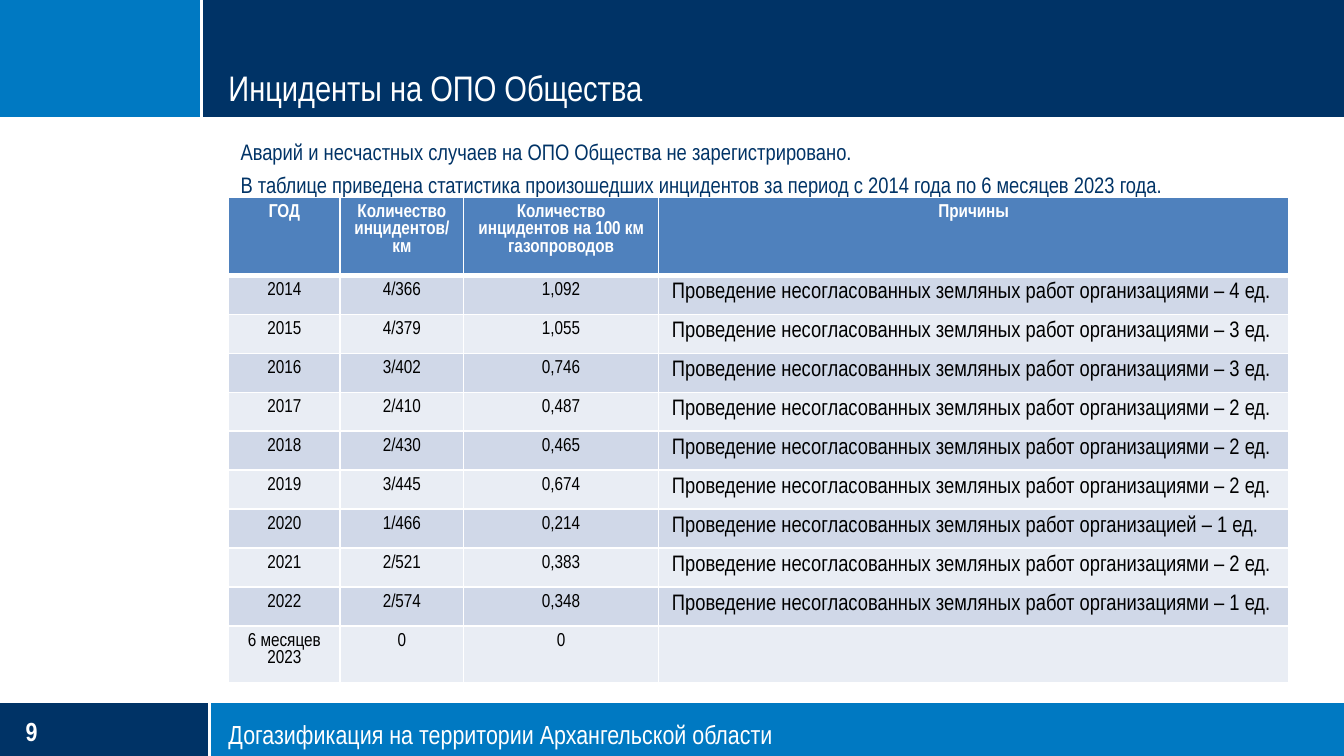
"""Build the slide on incidents at hazardous production facilities."""
from dataclasses import dataclass

from lxml.etree import SubElement
from pptx import Presentation
from pptx.dml.color import RGBColor
from pptx.enum.shapes import MSO_CONNECTOR, MSO_SHAPE
from pptx.enum.text import MSO_ANCHOR as Anchor, MSO_AUTO_SIZE, PP_ALIGN as Align
from pptx.oxml.ns import qn
from pptx.util import Inches, Pt

NAVY = RGBColor(0x00, 0x33, 0x66)
BLUE = RGBColor(0x00, 0x79, 0xC2)
WHITE = RGBColor(0xFF, 0xFF, 0xFF)
BLACK = RGBColor(0x00, 0x00, 0x00)
HEADER_FILL = RGBColor(0x4F, 0x81, 0xBD)
ROW_FILLS = (RGBColor(0xE9, 0xED, 0xF4), RGBColor(0xD0, 0xD8, 0xE8))
FONT = "Arial Narrow"
WIDTH = 10
HEIGHT = WIDTH * 9 / 16
FOOTER_TOP = 5.23


@dataclass(frozen=True)
class Band:
    left: float
    top: float
    width: float
    height: float
    color: RGBColor


@dataclass(frozen=True)
class Rule:
    start: tuple[float, float]
    end: tuple[float, float]


@dataclass(frozen=True)
class TextStyle:
    size: float
    color: RGBColor
    bold: bool = False
    align: Align = Align.LEFT


BANDS = (
    Band(0, 0, WIDTH, 0.87, NAVY),
    Band(0, 0, 1.5, 0.87, BLUE),
    Band(0, FOOTER_TOP, 1.62, HEIGHT - FOOTER_TOP, NAVY),
    Band(1.55, FOOTER_TOP, 8.45, HEIGHT - FOOTER_TOP, BLUE),
)
RULES = (
    Rule((0, 5.22), (WIDTH, 5.22)),
    Rule((1.56, 5.22), (1.56, HEIGHT)),
    Rule((0, 0.88), (WIDTH, 0.88)),
    Rule((1.5, 0), (1.5, 0.88)),
)
INTRO = (
    "Аварий и несчастных случаев на ОПО Общества не зарегистрировано.",
    "В таблице приведена статистика произошедших инцидентов за период с 2014 года по 6 месяцев 2023 года.",
)
HEADERS = ("ГОД", "Количество инцидентов/км", "Количество инцидентов на 100 км газопроводов", "Причины")
WORKS = "Проведение несогласованных земляных работ"
MANY, ONE = f"{WORKS} организациями", f"{WORKS} организацией"
INCIDENTS = (
    ("2014", "4/366", "1,092", f"{MANY} – 4 ед."),
    ("2015", "4/379", "1,055", f"{MANY} – 3 ед."),
    ("2016", "3/402", "0,746", f"{MANY} – 3 ед."),
    ("2017", "2/410", "0,487", f"{MANY} – 2 ед."),
    ("2018", "2/430", "0,465", f"{MANY} – 2 ед."),
    ("2019", "3/445", "0,674", f"{MANY} – 2 ед."),
    ("2020", "1/466", "0,214", f"{ONE} – 1 ед."),
    ("2021", "2/521", "0,383", f"{MANY} – 2 ед."),
    ("2022", "2/574", "0,348", f"{MANY} – 1 ед."),
    ("6 месяцев 2023", "0", "0", ""),
)
COLUMN_WIDTHS = (0.83, 0.92, 1.45, 4.69)
ROW_HEIGHTS = (0.58, *[0.29] * 9, 0.42)
HEADER_BORDERS = {"a:lnL": 1, "a:lnR": 1, "a:lnT": 1, "a:lnB": 3}
HEADER_STYLE = TextStyle(10, WHITE, True, Align.CENTER)
FIGURE_STYLE = TextStyle(10, BLACK, False, Align.CENTER)
REASON_STYLE = TextStyle(12, BLACK)


def set_values(target, values: dict) -> None:
    for name, value in values.items():
        setattr(target, name, value)


def write(paragraph, text: str, style: TextStyle) -> None:
    paragraph.alignment = style.align
    run = paragraph.add_run()
    run.text = text
    set_values(run.font, {"name": FONT, "size": Pt(style.size), "bold": style.bold})
    run.font.color.rgb = style.color


def draw_band(slide, band: Band) -> None:
    shape = slide.shapes.add_shape(
        MSO_SHAPE.RECTANGLE, Inches(band.left), Inches(band.top), Inches(band.width), Inches(band.height))
    shape.shadow.inherit = False
    shape.fill.solid()
    shape.fill.fore_color.rgb = band.color
    shape.line.fill.background()


def draw_rule(slide, rule: Rule) -> None:
    connector = slide.shapes.add_connector(
        MSO_CONNECTOR.STRAIGHT, *map(Inches, rule.start), *map(Inches, rule.end))
    connector.line.color.rgb = WHITE
    connector.line.width = Pt(1.25)
    SubElement(connector.element.spPr, qn("a:effectLst"))


def fill_box(shape, box: tuple, lines: tuple, style: TextStyle, anchor: Anchor, indent: float = 0) -> None:
    set_values(shape, dict(zip(("left", "top", "width", "height"), map(Inches, box))))
    frame = shape.text_frame
    set_values(frame, {
        "margin_left": 0, "margin_top": 0, "margin_right": 0, "margin_bottom": 0,
        "word_wrap": True, "auto_size": MSO_AUTO_SIZE.NONE, "vertical_anchor": anchor,
    })
    for index, line in enumerate(lines):
        paragraph = frame.add_paragraph() if index else frame.paragraphs[0]
        properties = paragraph._p.get_or_add_pPr()
        properties.set("marL", str(Inches(indent)))
        properties.set("indent", "0")
        SubElement(properties, qn("a:buNone"))
        paragraph.space_before = Pt(3 if index else 0)
        write(paragraph, line, style)


def add_borders(cell, borders: dict[str, float]) -> None:
    properties = cell._tc.get_or_add_tcPr()
    for tag, width in borders.items():
        line = SubElement(properties, qn(tag), w=str(Pt(width)))
        SubElement(SubElement(line, qn("a:solidFill")), qn("a:srgbClr"), val=str(WHITE))


def draw_table(slide) -> None:
    table = slide.shapes.add_table(
        len(ROW_HEIGHTS), len(COLUMN_WIDTHS), Inches(1.7), Inches(1.47),
        Inches(sum(COLUMN_WIDTHS)), Inches(sum(ROW_HEIGHTS))).table
    for column, width in zip(table.columns, COLUMN_WIDTHS):
        column.width = Inches(width)
    for row_index, texts in enumerate((HEADERS, *INCIDENTS)):
        table.rows[row_index].height = Inches(ROW_HEIGHTS[row_index])
        for column_index, text in enumerate(texts):
            cell = table.cell(row_index, column_index)
            if row_index == 0:
                add_borders(cell, HEADER_BORDERS)
            cell.fill.solid()
            cell.fill.fore_color.rgb = ROW_FILLS[row_index % 2] if row_index else HEADER_FILL
            body_style = REASON_STYLE if column_index == 3 else FIGURE_STYLE
            if text:
                write(cell.text_frame.paragraphs[0], text, body_style if row_index else HEADER_STYLE)


def main() -> None:
    presentation = Presentation()
    set_values(presentation, {"slide_width": Inches(WIDTH), "slide_height": Inches(HEIGHT)})
    slide = presentation.slides.add_slide(presentation.slide_layouts[3])
    title, intro, footer = slide.placeholders
    for band in BANDS:
        draw_band(slide, band)
    number = slide.shapes.add_textbox(0, 0, 0, 0)
    fill_box(number, (0.19, 5.32, 1.05, 0.24), ("9",), TextStyle(14, WHITE, True), Anchor.MIDDLE)
    for rule in RULES:
        draw_rule(slide, rule)
    for placeholder in (intro, title, footer):
        placeholder.element.getparent().append(placeholder.element)
    fill_box(intro, (1.53, 1.03, 8.2, 4.06), INTRO, TextStyle(12, NAVY), Anchor.TOP, 0.26)
    fill_box(title, (1.7, 0.08, 8.12, 0.73), ("Инциденты на ОПО Общества",), TextStyle(19, WHITE), Anchor.BOTTOM)
    fill_box(footer, (1.7, 5.31, 8.12, 0.3), ("Догазификация на территории Архангельской области",),
             TextStyle(14, WHITE), Anchor.MIDDLE)
    draw_table(slide)
    presentation.save("out.pptx")


if __name__ == "__main__":
    main()
